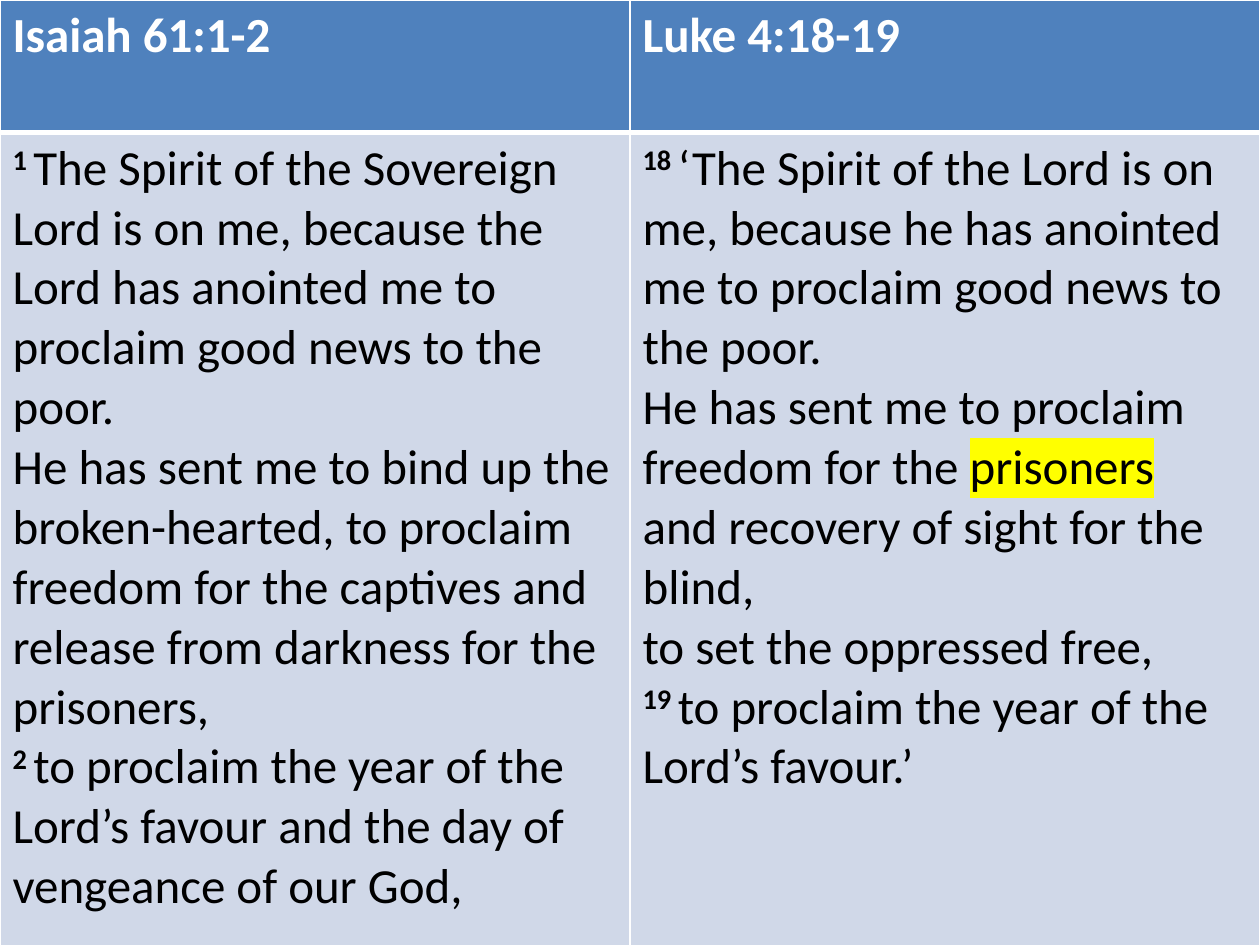
"""Builds a slide that compares Isaiah 61:1-2 with Luke 4:18-19."""
from lxml import etree
from pptx import Presentation
from pptx import util as u
from pptx.dml.color import RGBColor
from pptx.oxml import ns

WHITE, BLACK, YELLOW = "FFFFFF", "000000", "FFFF00"
HEADER_FILL, BODY_FILL = "4F81BD", "D0D8E8"
THIN, THICK = 1, 3
VERSE = {"bold": True, "raised": True}

HEADINGS = ["Isaiah 61:1-2", "Luke 4:18-19"]
ISAIAH = [
    ("1 ", VERSE),
    ("The Spirit of the Sovereign Lord is on me, because the Lord has "
     "anointed me to proclaim good news to the poor.\n"
     "He has sent me to bind up the broken-hearted, to proclaim freedom for "
     "the captives and release from darkness for the prisoners, \n", {}),
    ("2 ", VERSE),
    ("to proclaim the year of the Lord’s favour and the day of vengeance "
     "of our God,", {}),
]
LUKE = [
    ("18 ", VERSE),
    ("‘The Spirit of the Lord is on me, because he has anointed me to "
     "proclaim good news to the poor.\n"
     "He has sent me to proclaim freedom for the ", {}),
    ("prisoners\n", {"highlight": YELLOW}),
    ("and recovery of sight for the blind,\nto set the oppressed free,\n", {}),
    ("19 ", VERSE),
    ("to proclaim the year of the Lord’s favour.’", {}),
]


def colour(code):
    return RGBColor.from_string(code)


def add_solid_fill(parent, code):
    fill = etree.SubElement(parent, ns.qn("a:solidFill"))
    etree.SubElement(fill, ns.qn("a:srgbClr"), val=code)


def write(paragraph, wording, font="Calibri", size=28, ink=BLACK,
          bold=False, raised=False, highlight=None):
    for number, line in enumerate(wording.split("\n")):
        if number:
            paragraph.add_line_break()
        if not line:
            continue
        run = paragraph.add_run()
        run.text = line
        run.font.size, run.font.bold = u.Pt(size), bold
        run.font.color.rgb = colour(ink)
        run.font.name = font
        properties = run.font._element
        if raised:
            properties.set("baseline", "30000")
        if highlight:
            marker = etree.Element(ns.qn("a:highlight"))
            etree.SubElement(marker, ns.qn("a:srgbClr"), val=highlight)
            properties.find(ns.qn("a:latin")).addprevious(marker)
    for line_break in paragraph._p.findall(ns.qn("a:br")):
        line_break.get_or_add_rPr().set("sz", str(size * 100))


class Deck:
    def __init__(self, width, height):
        self.presentation = Presentation()
        self.presentation.slide_width = u.Inches(width)
        self.presentation.slide_height = u.Inches(height)
        blank = self.presentation.slide_layouts[6]
        self.slide = self.presentation.slides.add_slide(blank)

    def table(self, left, top, column_widths, row_heights):
        grid = self.slide.shapes.add_table(
            len(row_heights), len(column_widths), u.Inches(left), u.Inches(top),
            u.Inches(sum(column_widths)), u.Inches(sum(row_heights))).table
        for column, width in zip(grid.columns, column_widths):
            column.width = u.Inches(width)
        for row, height in zip(grid.rows, row_heights):
            row.height = u.Inches(height)
        return grid

    def cell(self, cell, passage, fill, top=THIN, bottom=THIN, **style):
        cell.fill.solid()
        cell.fill.fore_color.rgb = colour(fill)
        self.borders(cell, {"L": THIN, "R": THIN, "T": top, "B": bottom})
        for wording, accent in passage:
            write(cell.text_frame.paragraphs[0], wording, **{**style, **accent})

    def borders(self, cell, widths):
        properties = cell._tc.get_or_add_tcPr()
        for position, (side, width) in enumerate(widths.items()):
            edge = etree.Element(ns.qn("a:ln" + side), w=str(u.Pt(width)))
            add_solid_fill(edge, WHITE)
            properties.insert(position, edge)


def main():
    deck = Deck(10, 7.5)
    comparison = deck.table(0, 0, [5, 5], [1.05, 6.62])
    for column, (heading, passage) in enumerate(zip(HEADINGS, [ISAIAH, LUKE])):
        deck.cell(comparison.cell(0, column), [(heading, {})], HEADER_FILL,
                  bottom=THICK, ink=WHITE, bold=True)
        deck.cell(comparison.cell(1, column), passage, BODY_FILL, top=THICK)
    deck.presentation.save("out.pptx")


if __name__ == "__main__":
    main()
